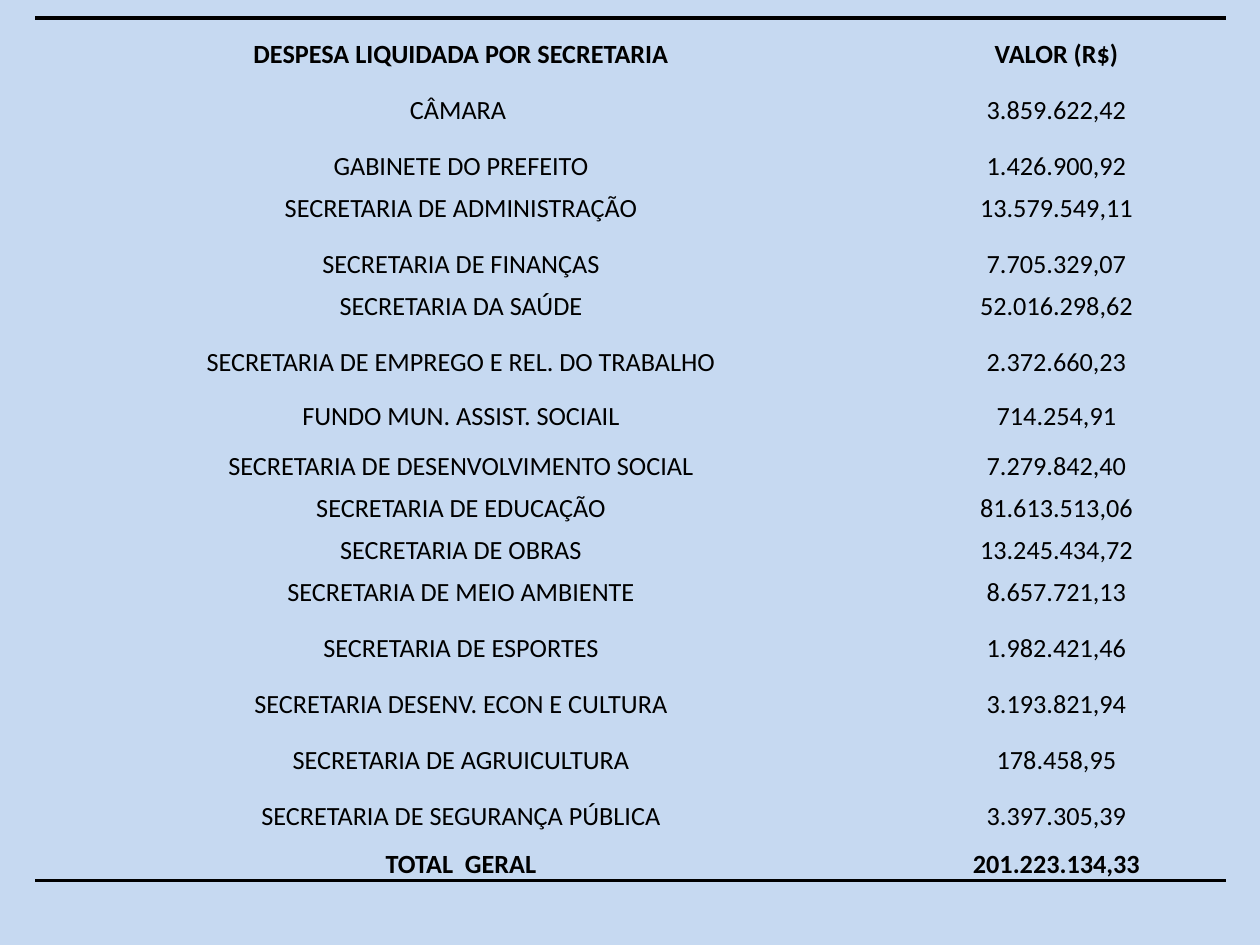
from lxml import etree
from pptx import Presentation
from pptx.dml.color import RGBColor
from pptx.enum.text import MSO_ANCHOR, PP_ALIGN
from pptx.oxml.ns import qn
from pptx.util import Pt

CENTER = PP_ALIGN.CENTER
BOTTOM = MSO_ANCHOR.BOTTOM
EMU_PER_PX = 914400 / 126
COLORS = {"background": "C6D9F1", "ink": "000000"}
FONT = "Calibri"
PLAIN_STYLE = "{2D5ABB26-0587-4C30-8999-92F81FD0307C}"
RULE_WIDTH = Pt(2)

TALL, SHORT = 56, 42
COLUMN_WIDTHS = (852, 339)
EXPENSES = [
    ("DESPESA LIQUIDADA POR SECRETARIA", "VALOR (R$)", 53),
    ("CÂMARA ", "3.859.622,42", TALL),
    ("GABINETE DO PREFEITO", "1.426.900,92", TALL),
    ("SECRETARIA DE ADMINISTRAÇÃO", "13.579.549,11", SHORT),
    ("SECRETARIA DE FINANÇAS", "7.705.329,07", TALL),
    ("SECRETARIA DA SAÚDE", "52.016.298,62", SHORT),
    ("SECRETARIA DE EMPREGO E REL. DO TRABALHO", "2.372.660,23", TALL),
    ("FUNDO MUN. ASSIST. SOCIAIL", "714.254,91", 54),
    ("SECRETARIA DE DESENVOLVIMENTO SOCIAL", "7.279.842,40", 50),
    ("SECRETARIA DE EDUCAÇÃO", "81.613.513,06", SHORT),
    ("SECRETARIA DE OBRAS", "13.245.434,72", SHORT),
    ("SECRETARIA DE MEIO AMBIENTE", "8.657.721,13", SHORT),
    ("SECRETARIA DE ESPORTES", "1.982.421,46", TALL),
    ("SECRETARIA DESENV. ECON E CULTURA", "3.193.821,94", TALL),
    ("SECRETARIA DE AGRUICULTURA", "178.458,95", TALL),
    ("SECRETARIA DE SEGURANÇA PÚBLICA", "3.397.305,39", TALL),
    ("TOTAL  GERAL", "201.223.134,33", 48),
]


def px(length):
    return round(length * EMU_PER_PX)


def color(name):
    return RGBColor.from_string(COLORS[name])


def add_rule(cell, side):
    """Draw a border on one side of a cell; side is lnT or lnB."""
    properties = cell._tc.get_or_add_tcPr()
    line = etree.Element(qn(f"a:{side}"), w=str(RULE_WIDTH))
    fill = etree.SubElement(line, qn("a:solidFill"))
    etree.SubElement(fill, qn("a:srgbClr"), val=COLORS["ink"])
    properties.insert(0, line)


def fill_cell(cell, text, bold):
    cell.fill.solid()
    cell.fill.fore_color.rgb = color("background")
    cell.vertical_anchor = BOTTOM
    cell.margin_left = cell.margin_right = cell.margin_top = px(1)
    cell.margin_bottom = 0
    cell.text = text
    para = cell.text_frame.paragraphs[0]
    para.alignment = CENTER
    para.font.name = FONT
    para.font.size = Pt(15)
    para.font.bold = bold
    para.font.color.rgb = color("ink")


def add_expense_table(page, left, top, width, height):
    frame = page.shapes.add_table(
        len(EXPENSES), len(COLUMN_WIDTHS), px(left), px(top), px(width), px(height))
    table = frame.table
    table.first_row = table.horz_banding = False
    next(frame._element.iter(qn("a:tableStyleId"))).text = PLAIN_STYLE
    for column, column_width in zip(table.columns, COLUMN_WIDTHS):
        column.width = px(column_width)

    last = len(EXPENSES) - 1
    for index, (*texts, row_height) in enumerate(EXPENSES):
        row = table.rows[index]
        row.height = px(row_height)
        for cell, text in zip(row.cells, texts):
            fill_cell(cell, text, bold=index in (0, last))
            if index == 0:
                add_rule(cell, "lnT")
            elif index == last:
                add_rule(cell, "lnB")


def main():
    deck = Presentation()
    deck.slide_width, deck.slide_height = px(1260), px(945)
    page = deck.slides.add_slide(deck.slide_layouts[6])
    page.background.fill.solid()
    page.background.fill.fore_color.rgb = color("background")
    table_height = sum(row_height for *_, row_height in EXPENSES)
    add_expense_table(page, 35, 18, sum(COLUMN_WIDTHS), table_height)
    deck.save("out.pptx")


if __name__ == "__main__":
    main()
